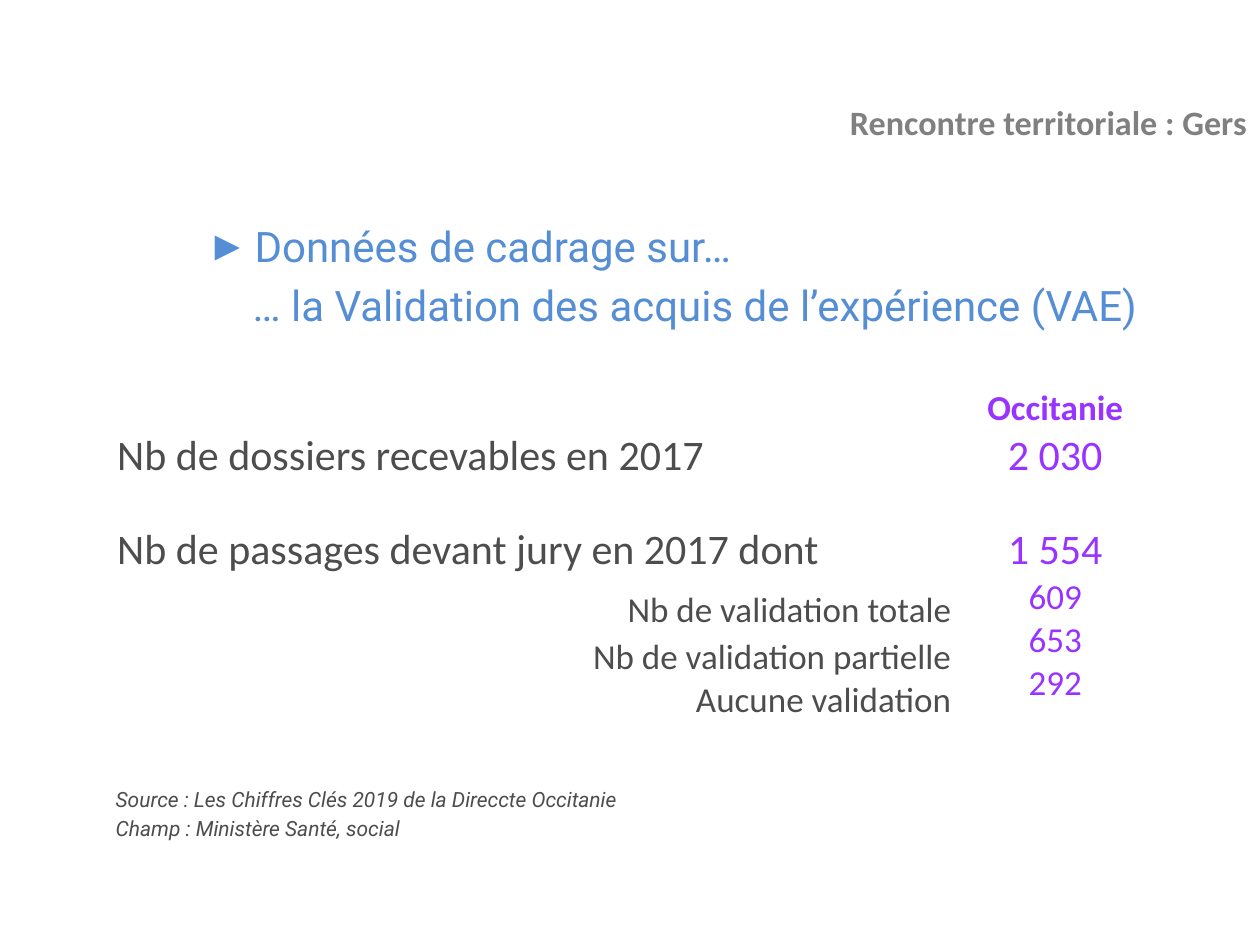
from dataclasses import dataclass
from lxml import etree
from pptx import Presentation
from pptx.dml.color import RGBColor
from pptx.enum.text import MSO_ANCHOR, MSO_AUTO_SIZE, PP_ALIGN
from pptx.oxml.ns import qn
from pptx.util import Inches, Pt

LEFT, MID, RIGHT = PP_ALIGN.LEFT, PP_ALIGN.CENTER, PP_ALIGN.RIGHT
TOP, LOW = MSO_ANCHOR.TOP, MSO_ANCHOR.BOTTOM


@dataclass(frozen=True)
class Theme:
    blue: str = "558ED5"
    gray: str = "808080"
    ink: str = "4D4D4D"
    violet: str = "9933FF"
    line: str = "FFFFFF"
    head: str = "Roboto"
    body: str = "Calibri"
    large: float = 24
    medium: float = 20
    banner: float = 19.5
    small: float = 12


T = Theme()

BANNER = "Rencontre territoriale : Gers"
TOPIC = ["Données de cadrage sur…", "… la Validation des acquis de l’expérience (VAE)"]
REGION = "Occitanie"
# label, value, size, label alignment, space before label, space before value
FACTS = [
    ("Nb de dossiers recevables en 2017", "2 030", T.large, LEFT, 0, 0),
    ("Nb de passages devant jury en 2017 dont", "1 554", T.large, LEFT, 24.4, 24.4),
    ("Nb de validation totale", "609", T.medium, RIGHT, 7.6, 0),
    ("Nb de validation partielle", "653", T.medium, RIGHT, 2.2, 0),
    ("Aucune validation", "292", T.medium, RIGHT, 0, 0),
]
SOURCE = ["Source : Les Chiffres Clés 2019 de la Direccte Occitanie",
          "Champ : Ministère Santé, social"]
COLS, ROWS = (6.64, 1.63), (0.47, 2.7)


def place(shape, left, top, width, height):
    shape.left, shape.top = Inches(left), Inches(top)
    shape.width, shape.height = Inches(width), Inches(height)
    shape.text_frame.word_wrap = True
    shape.text_frame.auto_size = MSO_AUTO_SIZE.NONE
    return shape.text_frame


def write(frame, lines, font, color, bold=False, italic=False):
    """Fill a frame with (text, size, alignment, space before) lines."""
    for i, (text, size, align, gap) in enumerate(lines):
        para = frame.paragraphs[0] if i == 0 else frame.add_paragraph()
        para.alignment, para.space_before = align, Pt(gap)
        run = para.add_run()
        run.text = text
        run.font.name, run.font.size = font, Pt(size)
        run.font.bold, run.font.italic = bold, italic
        run.font.color.rgb = RGBColor.from_string(color)


def bullet(para, char, indent):
    props = para._p.get_or_add_pPr()
    props.set("marL", str(Inches(indent)))
    props.set("indent", str(-Inches(indent)))
    if char:
        etree.SubElement(props, qn("a:buChar")).set("char", char)
    else:
        etree.SubElement(props, qn("a:buNone"))


def border(cell):
    props = cell._tc.get_or_add_tcPr()
    for i, side in enumerate(("a:lnL", "a:lnR", "a:lnT", "a:lnB")):
        line = etree.Element(qn(side), w=str(Pt(1)))
        fill = etree.SubElement(line, qn("a:solidFill"))
        etree.SubElement(fill, qn("a:srgbClr")).set("val", T.line)
        props.insert(i, line)


def add_facts(slide):
    table = slide.shapes.add_table(
        len(ROWS), len(COLS), Inches(0.92), Inches(2.94),
        Inches(sum(COLS)), Inches(sum(ROWS))).table
    table.first_row = table.horz_banding = False
    for col, width in zip(table.columns, COLS):
        col.width = Inches(width)
    for row, height in zip(table.rows, ROWS):
        row.height = Inches(height)
    for cell in table.iter_cells():
        cell.fill.background()
        cell.margin_left = cell.margin_right = cell.margin_top = Inches(0.01)
        cell.margin_bottom = 0
        cell.vertical_anchor = TOP
        border(cell)
    labels = [(label, size, align, gap) for label, _, size, align, gap, _ in FACTS]
    values = [(value, size, MID, gap) for _, value, size, _, _, gap in FACTS]
    region = table.cell(0, 1)
    region.vertical_anchor = LOW
    write(region.text_frame, [(REGION, T.medium, MID, 0)], T.body, T.violet, bold=True)
    write(table.cell(1, 0).text_frame, labels, T.body, T.ink)
    write(table.cell(1, 1).text_frame, values, T.body, T.violet)


def main():
    deck = Presentation()
    deck.slide_width, deck.slide_height = Inches(10), Inches(7.5)
    slide = deck.slides.add_slide(deck.slide_layouts[1])

    banner = place(slide.shapes.title, 1.77, 0.3, 8.23, 0.93)
    banner.vertical_anchor, banner.margin_bottom = LOW, Inches(0.1)
    write(banner, [(BANNER, T.banner, RIGHT, 0)], T.body, T.gray, bold=True)

    topic = place(slide.placeholders[1], 1.54, 1.7, 7.95, 1.26)
    first, second = TOPIC
    write(topic, [(first, T.large, LEFT, 0), (second, T.large, MID, T.large * 0.2)],
          T.head, T.blue)
    for para, char, indent in zip(topic.paragraphs, ("►", None), (0.38, 0)):
        bullet(para, char, indent)

    add_facts(slide)

    source = place(slide.shapes.add_textbox(0, 0, 0, 0), 0.82, 6.19, 6.93, 0.63)
    gaps = (0, T.small * 0.2)
    write(source, [(text, T.small, LEFT, gap) for text, gap in zip(SOURCE, gaps)],
          T.head, T.ink, italic=True)
    deck.save("out.pptx")


if __name__ == "__main__":
    main()
